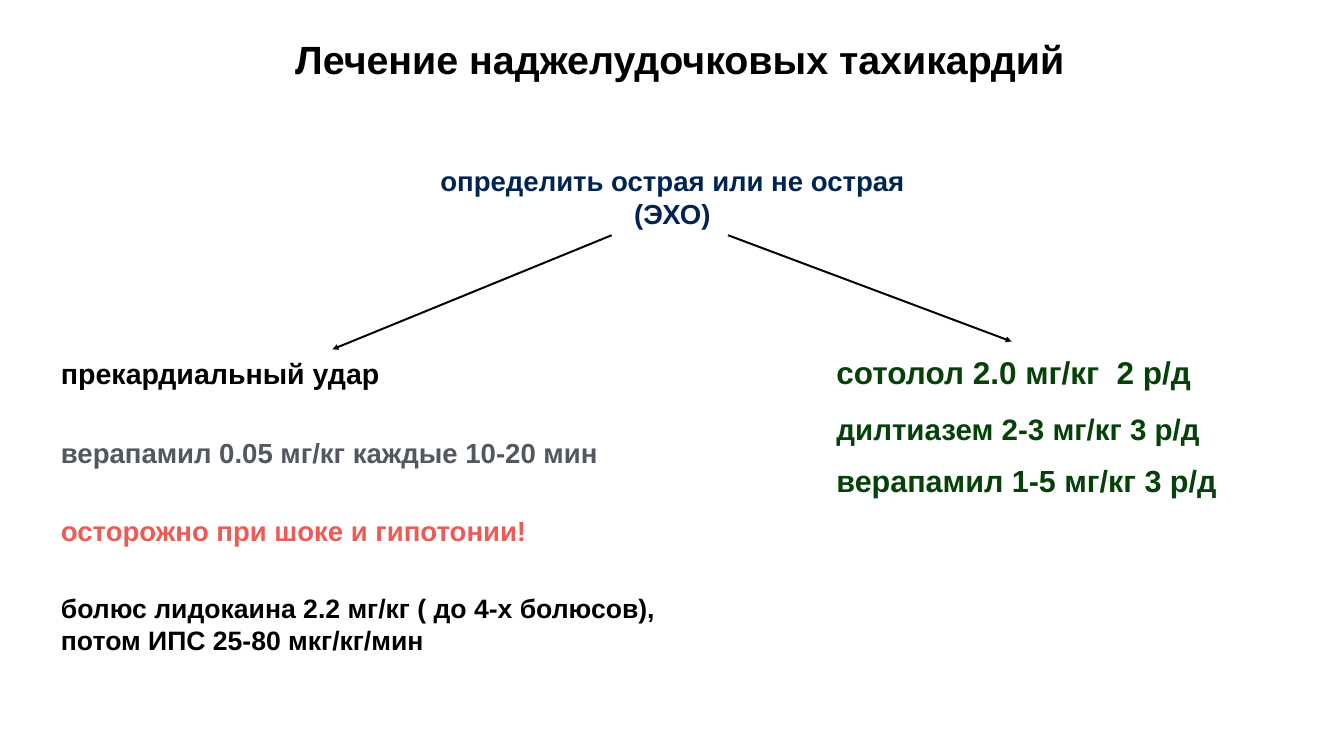
from pptx import Presentation
from pptx.dml.color import RGBColor
from pptx.enum.shapes import MSO_CONNECTOR
from pptx.enum.text import MSO_ANCHOR, MSO_AUTO_SIZE, PP_ALIGN
from pptx.oxml.ns import qn
from pptx.util import Pt
from lxml.etree import SubElement

EMU_PER_PX = 9144
BLACK = RGBColor(0x00, 0x00, 0x00)
NAVY = RGBColor(0x00, 0x24, 0x52)
GREY = RGBColor(0x53, 0x58, 0x5F)
RED = RGBColor(0xEC, 0x5C, 0x57)
GREEN = RGBColor(0x05, 0x41, 0x09)

ACUTE_LEFT = 80
CHRONIC_LEFT = 1174
ACUTE_STEPS = [
    (497, 466, 60, 29, BLACK, ["прекардиальный удар"]),
    (609, 783, 58, 28, GREY, ["верапамил 0.05 мг/кг каждые 10-20 мин"]),
    (719, 685, 58, 28, RED, ["осторожно при шоке и гипотонии!"]),
    (829, 860, 102, 27, BLACK, ["болюс лидокаина 2.2 мг/кг ( до 4-х болюсов),",
                                "потом ИПС 25-80 мкг/кг/мин"]),
]
CHRONIC_DRUGS = [
    (493, 520, 65, 32, GREEN, ["сотолол 2.0 мг/кг  2 р/д"]),
    (574, 533, 61, 30, GREEN, ["дилтиазем 2-3 мг/кг 3 р/д"]),
    (647, 553, 63, 31, GREEN, ["верапамил 1-5 мг/кг 3 р/д"]),
]


def px(length):
    """Turn a length in px into EMU."""
    return length * EMU_PER_PX


def add_label(slide, left, top, width, height, size, color, lines, align=PP_ALIGN.LEFT):
    """Add a bold label with one paragraph per line."""
    label = slide.shapes.add_textbox(px(left), px(top), px(width), px(height))
    frame = label.text_frame
    frame.word_wrap = False
    frame.auto_size = MSO_AUTO_SIZE.SHAPE_TO_FIT_TEXT
    frame.vertical_anchor = MSO_ANCHOR.MIDDLE
    frame.margin_left = frame.margin_right = px(6)
    frame.margin_top = frame.margin_bottom = px(6)
    frame.text = "\n".join(lines)
    for paragraph in frame.paragraphs:
        paragraph.alignment = align
        paragraph.font.name = "Arial"
        paragraph.font.size = Pt(size)
        paragraph.font.bold = True
        paragraph.font.color.rgb = color


def add_arrow(slide, start, end):
    """Add a black line with an arrowhead at its end."""
    arrow = slide.shapes.add_connector(
        MSO_CONNECTOR.STRAIGHT, *map(px, start), *map(px, end))
    arrow.line.color.rgb = BLACK
    arrow.line.width = Pt(2)
    SubElement(arrow.line._get_or_add_ln(), qn("a:tailEnd"), type="triangle")
    SubElement(arrow._element.spPr, qn("a:effectLst"))


def main():
    """Build the treatment slide and save it."""
    deck = Presentation()
    deck.slide_width, deck.slide_height = px(1896), px(1067)
    slide = deck.slides.add_slide(deck.slide_layouts[6])

    add_label(slide, 401, 43, 1116, 79, 40, BLACK,
              ["Лечение наджелудочковых тахикардий"], PP_ALIGN.CENTER)
    add_label(slide, 611, 226, 675, 105, 28, NAVY,
              ["определить острая или не острая", "(ЭХО)"], PP_ALIGN.CENTER)
    add_arrow(slide, (863, 332), (469, 493))
    add_arrow(slide, (1027, 332), (1427, 482))

    for left, branch in ((ACUTE_LEFT, ACUTE_STEPS), (CHRONIC_LEFT, CHRONIC_DRUGS)):
        for step in branch:
            add_label(slide, left, *step)

    deck.save("out.pptx")


if __name__ == "__main__":
    main()
